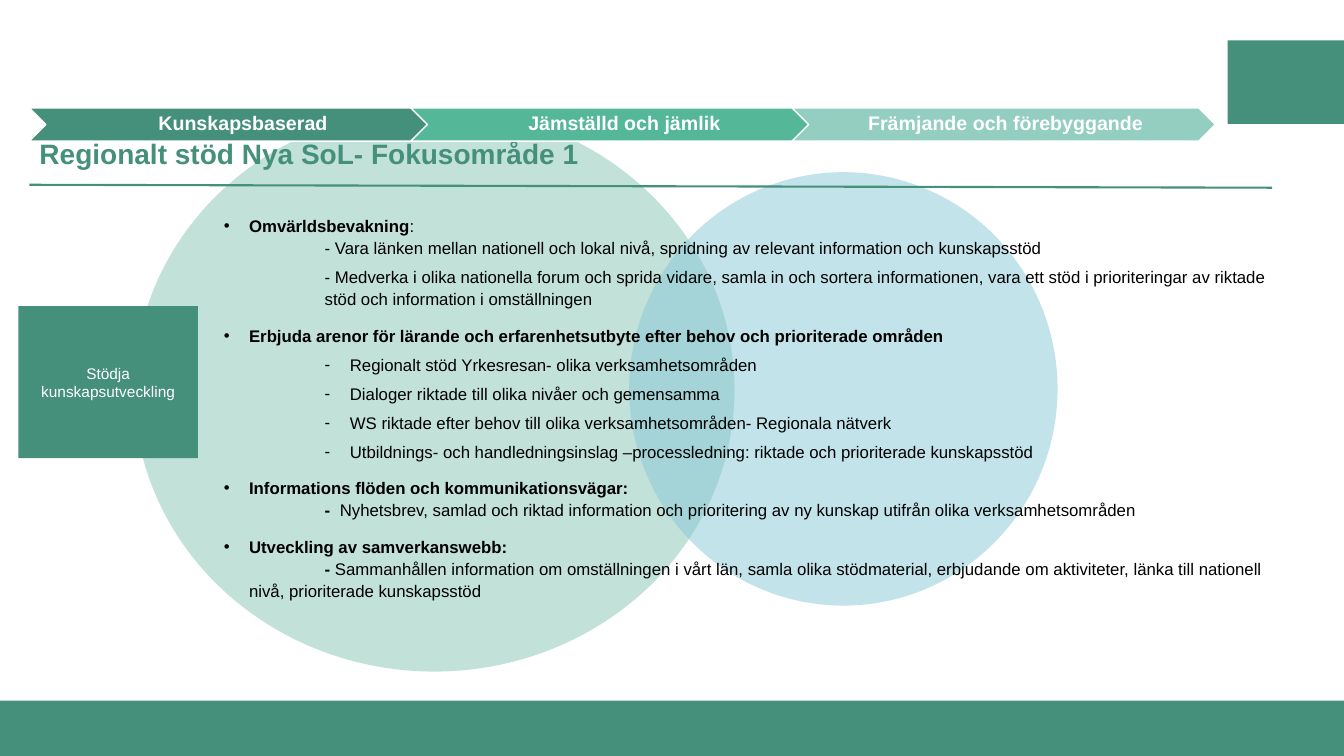
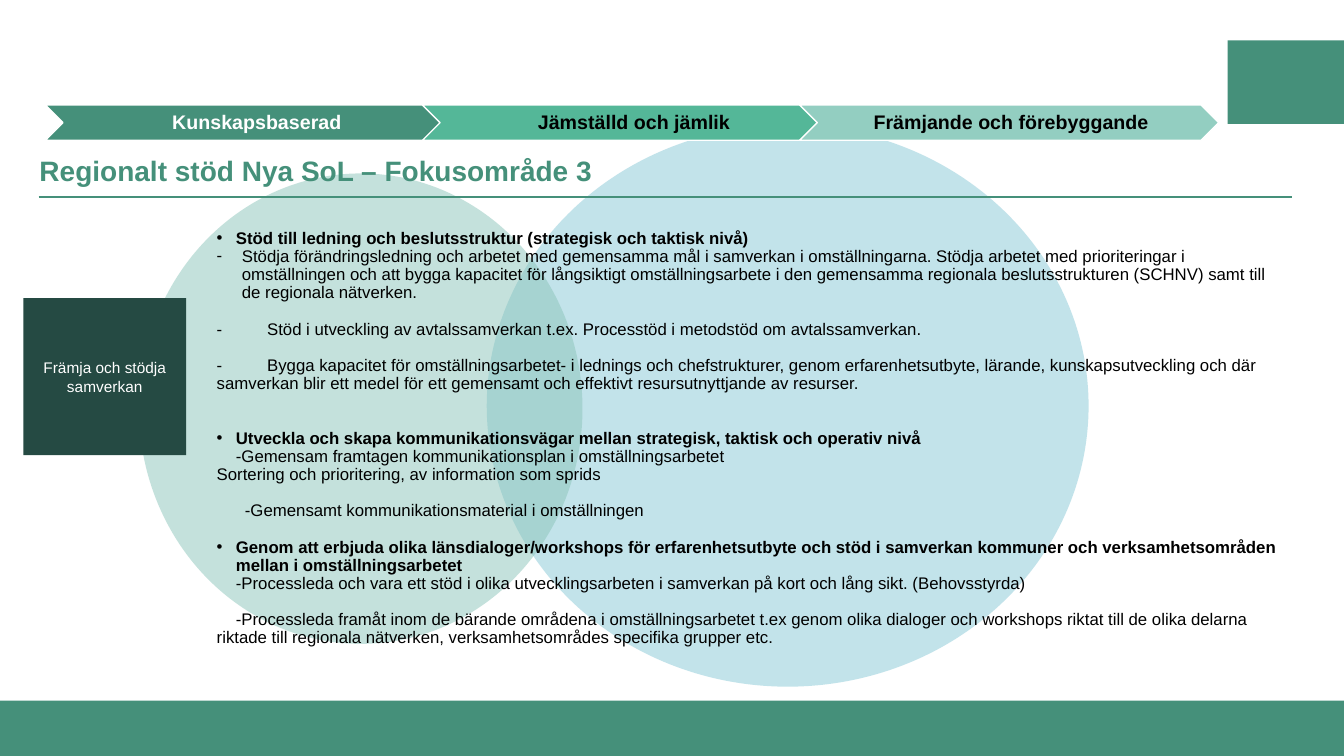
from dataclasses import dataclass
from typing import NamedTuple

from lxml.etree import SubElement
from pptx import Presentation
from pptx.dml.color import RGBColor
from pptx.enum.shapes import MSO_CONNECTOR, MSO_SHAPE
from pptx.enum.text import MSO_ANCHOR, MSO_AUTO_SIZE, PP_ALIGN
from pptx.oxml.ns import qn
from pptx.util import Emu, Inches, Pt

COLUMNS, ROWS = 160, 90
CELL = Inches(1) // 12
FONT = "Arial"
BLANK = 13

GREEN = RGBColor(0x45, 0x90, 0x7A)
MINT = RGBColor(0x54, 0xB7, 0x98)
PALE_MINT = RGBColor(0x93, 0xCE, 0xC1)
DARK_GREEN = RGBColor(0x25, 0x4A, 0x43)
SOFT_GREEN = RGBColor(0x87, 0xC5, 0xB3)
SOFT_TEAL = RGBColor(0x8B, 0xC5, 0xBA)
SOFT_BLUE = RGBColor(0x87, 0xC8, 0xD7)
WHITE = RGBColor(0xFF, 0xFF, 0xFF)
BLACK = RGBColor(0x00, 0x00, 0x00)


class Area(NamedTuple):
    column: float
    row: float
    columns: float
    rows: float


class Circle(NamedTuple):
    area: Area
    color: RGBColor


class Step(NamedTuple):
    label: str
    color: RGBColor


@dataclass(frozen=True)
class Point:
    text: str
    bold: bool = False
    bullet: str = ""
    margin: float = 0
    indent: float = 0
    before: float = 0
    level: int = 0
    tab: float = 0
    lead: str = ""
    tail: str = ""


@dataclass(frozen=True)
class FocusArea:
    title: str
    title_row: float
    rule: tuple[float, float, float, float]
    circles: list[Circle]
    first_step: Area
    step_pitch: float
    later_label_color: RGBColor
    theme: str
    theme_area: Area
    theme_color: RGBColor
    body_area: Area
    line_spacing: float
    points: list[Point]


BANDS = [Area(146.15, 4.8, 13.85, 9.95), Area(0, 83.4, COLUMNS, 6.6)]
STEPS = [
    Step("Kunskapsbaserad", GREEN),
    Step("Jämställd och jämlik", MINT),
    Step("Främjande och förebyggande", PALE_MINT),
]


def heading(text: str, hang: float, before: float = 0, tail: str = "") -> Point:
    return Point(text, True, "•", hang, -hang, before, tail=tail)


def dashed(text: str) -> Point:
    return Point(text, bullet="-", margin=1.25, indent=-0.25, before=5, level=1)


FOCUS_AREAS = [
    FocusArea(
        title="Regionalt stöd Nya SoL- Fokusområde 1",
        title_row=15.5,
        rule=(3.5, 22, 151.45, 22.35),
        circles=[
            Circle(Area(15.95, 12.85, 71.5, 67.1), SOFT_GREEN),
            Circle(Area(74.9, 20.5, 51, 51.6), SOFT_BLUE),
        ],
        first_step=Area(3.5, 12.85, 50.4, 3.95),
        step_pitch=45.4,
        later_label_color=WHITE,
        theme="Stödja kunskapsutveckling",
        theme_area=Area(2.2, 36.45, 21.35, 18.1),
        theme_color=GREEN,
        body_area=Area(25.45, 24.85, 129.25, 48.85),
        line_spacing=1.1,
        points=[
            heading("Omvärldsbevakning", 0.25, tail=":"),
            Point("- Vara länken mellan nationell och lokal nivå, spridning av relevant "
                  "information och kunskapsstöd", margin=1, level=1),
            Point("- Medverka i olika nationella forum och sprida vidare, samla in och sortera "
                  "informationen, vara ett stöd i prioriteringar av riktade stöd och "
                  "information i omställningen", margin=1, before=5, level=1),
            heading("Erbjuda arenor för lärande och erfarenhetsutbyte efter behov och "
                    "prioriterade områden", 0.25, 10),
            dashed("Regionalt stöd Yrkesresan- olika verksamhetsområden"),
            dashed("Dialoger riktade till olika nivåer och gemensamma"),
            dashed("WS riktade efter behov till olika verksamhetsområden- Regionala nätverk"),
            dashed("Utbildnings- och handledningsinslag –processledning: riktade och "
                   "prioriterade kunskapsstöd"),
            heading("Informations flöden och kommunikationsvägar:", 0.25, 10),
            Point("Nyhetsbrev, samlad och riktad information och prioritering av ny kunskap "
                  "utifrån olika verksamhetsområden",
                  margin=1.15, indent=-0.15, level=1, lead="-\t"),
            heading("Utveckling av samverkanswebb:", 0.25, 10),
            Point("Sammanhållen information om omställningen i vårt län, samla olika "
                  "stödmaterial, erbjudande om aktiviteter, länka till nationell nivå, "
                  "prioriterade kunskapsstöd",
                  margin=0.25, indent=0.75, level=1, lead="- "),
        ],
    ),
    FocusArea(
        title="Regionalt stöd Nya SoL – Fokusområde 3",
        title_row=17.5,
        rule=(4.6, 23.4, 153.85, 23.4),
        circles=[
            Circle(Area(57.95, 14.9, 71.65, 66.85), SOFT_BLUE),
            Circle(Area(16.55, 20.65, 52.8, 56), SOFT_TEAL),
        ],
        first_step=Area(5.4, 12.5, 49.9, 4.2),
        step_pitch=44.9,
        later_label_color=BLACK,
        theme="Främja och stödja samverkan",
        theme_area=Area(2.8, 35.5, 19.35, 18.7),
        theme_color=DARK_GREEN,
        body_area=Area(24.6, 26.75, 129.25, 51.5),
        line_spacing=0.9,
        points=[
            heading("Stöd till ledning och beslutsstruktur (strategisk och taktisk nivå)", 0.19),
            Point("Stödja förändringsledning och arbetet med gemensamma mål i samverkan i "
                  "omställningarna. Stödja arbetet med prioriteringar i omställningen och att "
                  "bygga kapacitet för långsiktigt omställningsarbete i den gemensamma "
                  "regionala beslutsstrukturen (SCHNV) samt till de regionala nätverken.",
                  bullet="-", margin=0.25, indent=-0.25),
            Point("-\tStöd i utveckling av avtalssamverkan t.ex. Processtöd i metodstöd om "
                  "avtalssamverkan.", before=BLANK, tab=0.29),
            Point("-\tBygga kapacitet för omställningsarbetet- i lednings och chefstrukturer, "
                  "genom erfarenhetsutbyte, lärande, kunskapsutveckling och där samverkan blir "
                  "ett medel för ett gemensamt och effektivt resursutnyttjande av resurser.",
                  before=BLANK, tab=0.29),
            heading("Utveckla och skapa kommunikationsvägar mellan strategisk, taktisk och "
                    "operativ nivå", 0.19, 2 * BLANK),
            Point("-Gemensam framtagen kommunikationsplan i omställningsarbetet", indent=0.19),
            Point("Sortering och prioritering, av information som sprids"),
            Point("-Gemensamt kommunikationsmaterial i omställningen",
                  indent=0.28, before=BLANK),
            heading("Genom att erbjuda olika länsdialoger/workshops för erfarenhetsutbyte och "
                    "stöd i samverkan kommuner och verksamhetsområden mellan i "
                    "omställningsarbetet", 0.19, BLANK),
            Point("-Processleda och vara ett stöd i olika utvecklingsarbeten i samverkan på "
                  "kort och lång sikt. (Behovsstyrda)", margin=0.19),
            Point("-Processleda framåt inom de bärande områdena i omställningsarbetet t.ex "
                  "genom olika dialoger och workshops riktat till de olika delarna riktade till "
                  "regionala nätverken, verksamhetsområdes specifika grupper etc.",
                  indent=0.19, before=BLANK),
        ],
    ),
]


def cells(count: float) -> Emu:
    return Emu(round(count * CELL))


def place(shape, area: Area) -> None:
    shape.left, shape.top, shape.width, shape.height = map(cells, area)


def style(paragraph, size: float, color: RGBColor, bold: bool | None = None) -> None:
    font = paragraph.font
    font.name, font.size, font.bold = FONT, Pt(size), bold
    font.color.rgb = color


def add_filled(slide, preset: MSO_SHAPE, area: Area, color: RGBColor):
    shape = slide.shapes.add_shape(preset, *map(cells, area))
    shape.shadow.inherit = False
    shape.fill.solid()
    shape.fill.fore_color.rgb = color
    shape.line.fill.background()
    return shape


def add_label(shape, text: str, size: float, color: RGBColor, bold: bool = False) -> None:
    frame = shape.text_frame
    frame.word_wrap = True
    frame.vertical_anchor = MSO_ANCHOR.MIDDLE
    paragraph = frame.paragraphs[0]
    paragraph.text = text
    paragraph.alignment = PP_ALIGN.CENTER
    style(paragraph, size, color, bold)


def add_bands(slide) -> None:
    tree = slide.slide_layout.element.cSld.spTree
    for number, area in enumerate(BANDS):
        band = add_filled(slide, MSO_SHAPE.RECTANGLE, area, GREEN).element
        band.nvSpPr.cNvPr.set("id", str(20 + number))
        tree.insert(2 + number, band)


def add_circle(slide, circle: Circle) -> None:
    shape = add_filled(slide, MSO_SHAPE.OVAL, circle.area, circle.color)
    for color in shape.element.spPr.iter(qn("a:srgbClr")):
        SubElement(color, qn("a:alpha"), val="50000")
    slide.shapes.title.element.addprevious(shape.element)


def add_steps(slide, focus: FocusArea) -> None:
    first = focus.first_step
    for number, step in enumerate(STEPS):
        area = first._replace(column=first.column + number * focus.step_pitch)
        chevron = add_filled(slide, MSO_SHAPE.CHEVRON, area, step.color)
        chevron.line.color.rgb = WHITE
        chevron.line.width = Pt(1)
        frame = chevron.text_frame
        frame.margin_left = Inches(0.06)
        frame.margin_right = frame.margin_top = frame.margin_bottom = Inches(0.02)
        add_label(chevron, step.label, 14, focus.later_label_color if number else WHITE, True)
        frame.paragraphs[0].line_spacing = 0.9


def add_rule(slide, ends: tuple[float, float, float, float]) -> None:
    rule = slide.shapes.add_connector(MSO_CONNECTOR.STRAIGHT, *map(cells, ends))
    rule.line.color.rgb = GREEN
    rule.line.width = Pt(1.5)
    SubElement(rule.element.spPr, qn("a:effectLst"))


def fill_title(title, focus: FocusArea) -> None:
    place(title, Area(3.5, focus.title_row, 136.7, 6.1))
    frame = title.text_frame
    frame.auto_size = MSO_AUTO_SIZE.NONE
    frame.vertical_anchor = MSO_ANCHOR.MIDDLE
    paragraph = frame.paragraphs[0]
    paragraph.text = focus.title
    paragraph.alignment = PP_ALIGN.LEFT
    paragraph.line_spacing = 0.9
    style(paragraph, 20, GREEN, True)


def write_point(paragraph, point: Point, line_spacing: float) -> None:
    paragraph.level = point.level
    paragraph.line_spacing = line_spacing
    paragraph.space_before, paragraph.space_after = Pt(point.before), Pt(0)
    properties = paragraph._p.get_or_add_pPr()
    properties.set("marL", str(Inches(point.margin)))
    properties.set("indent", str(Inches(point.indent)))
    if point.bullet:
        SubElement(properties, qn("a:buFont"), typeface=FONT)
        SubElement(properties, qn("a:buChar"), char=point.bullet)
    else:
        SubElement(properties, qn("a:buNone"))
    if point.tab:
        stops = SubElement(properties, qn("a:tabLst"))
        SubElement(stops, qn("a:tab"), pos=str(Inches(point.tab)), algn="l")
    mixed = bool(point.lead or point.tail)
    style(paragraph, 12, BLACK, None if mixed else point.bold)
    parts = [(point.lead, True), (point.text, point.bold), (point.tail, False)]
    for text, bold in parts:
        if text:
            run = paragraph.add_run()
            run.text = text
            if mixed:
                run.font.bold = bold


def fill_body(body, focus: FocusArea) -> None:
    place(body, focus.body_area)
    frame = body.text_frame
    frame.auto_size = MSO_AUTO_SIZE.NONE
    for number, point in enumerate(focus.points):
        paragraph = frame.add_paragraph() if number else frame.paragraphs[0]
        write_point(paragraph, point, focus.line_spacing)


def add_focus_slide(deck, focus: FocusArea):
    slide = deck.slides.add_slide(deck.slide_layouts[1])
    for circle in focus.circles:
        add_circle(slide, circle)
    fill_title(slide.shapes.title, focus)
    fill_body(slide.placeholders[1], focus)
    theme = add_filled(slide, MSO_SHAPE.RECTANGLE, focus.theme_area, focus.theme_color)
    add_label(theme, focus.theme, 11, WHITE)
    add_rule(slide, focus.rule)
    add_steps(slide, focus)
    return slide


def main() -> None:
    deck = Presentation()
    deck.slide_width, deck.slide_height = cells(COLUMNS), cells(ROWS)
    slides = [add_focus_slide(deck, focus) for focus in FOCUS_AREAS]
    add_bands(slides[0])
    deck.save("out.pptx")


if __name__ == "__main__":
    main()
